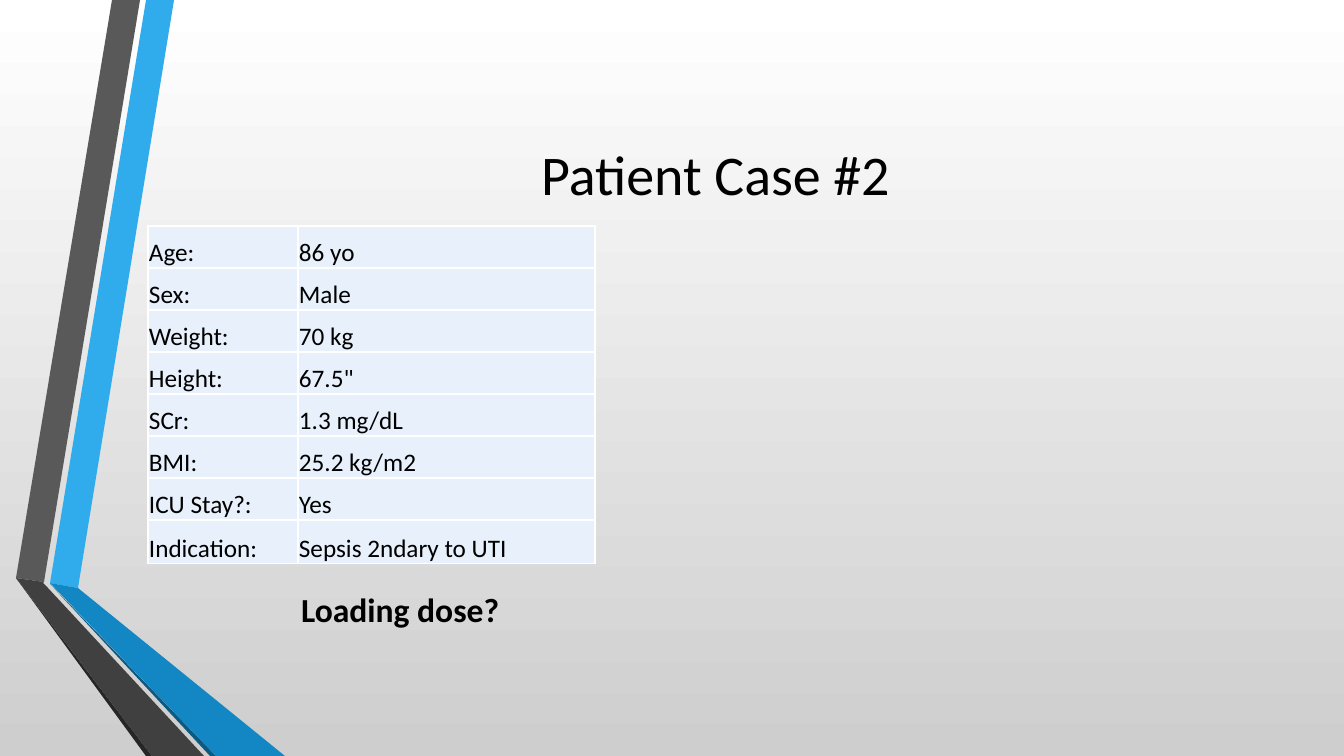
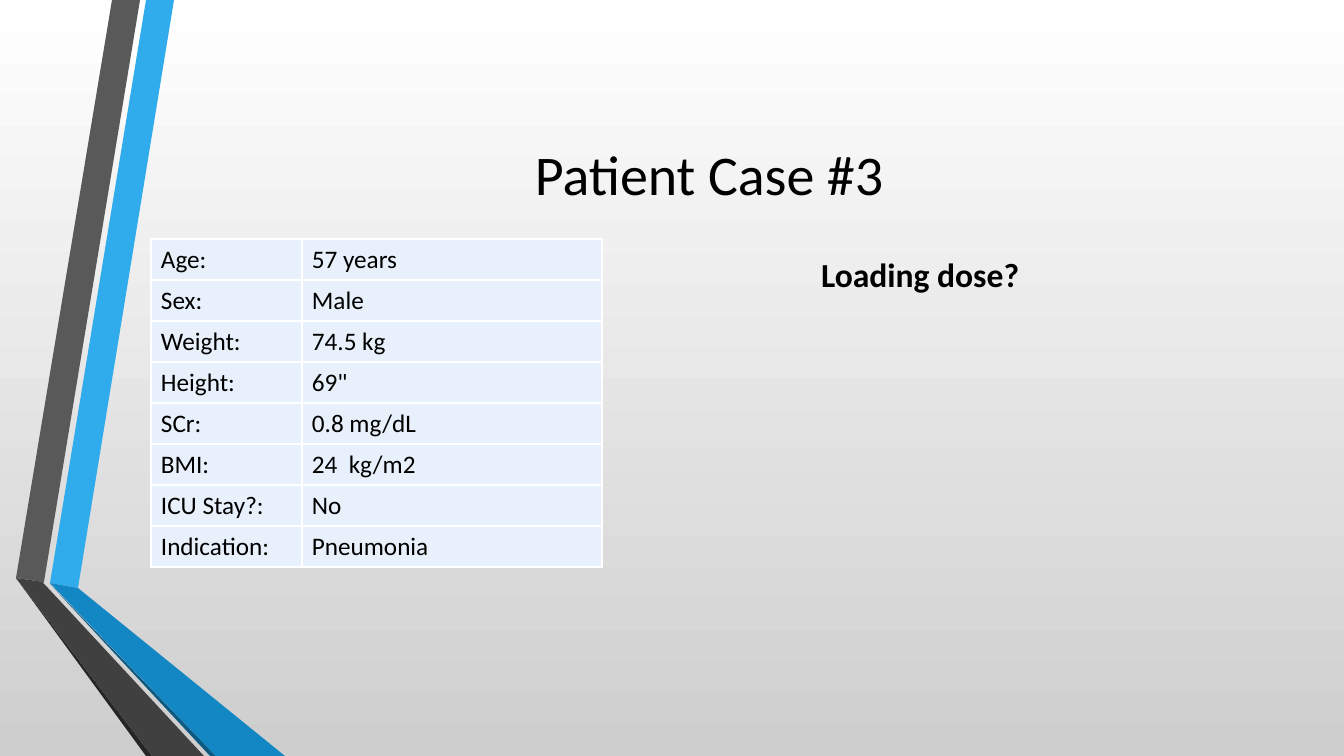
from lxml import etree
from pptx import Presentation, util as u
from pptx.dml import color
from pptx.enum import text
from pptx.oxml import ns

EMU_PER_PX = 12192000 / 1344
WIDTH, HEIGHT = 1344, 756
BANDS = [
    ("30ACEC", [(50, 583), (78, 588), (174, 0), (146, 0)]),
    ("595959", [(140, 0), (112, 0), (16, 578), (44, 582)]),
    ("262626", [(16, 578), (146, 756), (152, 756)]),
    ("0C5A82", [(50, 584), (210, 756), (216, 756)]),
    ("1287C3", [(50, 583), (216, 756), (285, 756), (78, 588)]),
    ("404040", [(204, 756), (48, 588), (43, 583), (44, 582), (16, 578), (152, 756)]),
]
LABELS = ["Age:", "Sex:", "Weight:", "Height:", "SCr:", "BMI:", "ICU Stay?:", "Indication:"]


def px(length):
    """Turn pixels into EMU."""
    return u.Emu(round(length * EMU_PER_PX))


def rgb(value):
    """Turn a hex string into a colour."""
    return color.RGBColor.from_string(value)


class Deck:
    """Hold the shared style and the current slide."""

    FONT = "Calibri"
    INK = "000000"
    CELL_FILL = "E8F1FB"
    BORDER = "FFFFFF"
    BACKGROUND = ("FFFFFF", "CECECE")

    def __init__(self):
        """Start an empty presentation."""
        self.presentation = Presentation()
        self.presentation.slide_width = px(WIDTH)
        self.presentation.slide_height = px(HEIGHT)
        self.slide = None

    def add_slide(self, title):
        """Add a slide with its background, bands and title."""
        self.slide = self.presentation.slides.add_slide(self.presentation.slide_layouts[6])
        fill = self.slide.background.fill
        fill.gradient()
        fill.gradient_angle = 270
        for position, (stop, value) in enumerate(zip(fill.gradient_stops, self.BACKGROUND)):
            stop.color.rgb = rgb(value)
            stop.position = position
        self.add_bands()
        self.add_text(title, (163, 76, 1105, 194), 40, anchor=text.MSO_ANCHOR.MIDDLE)

    def add_bands(self):
        """Draw the folded bands on the left as one group."""
        group = self.slide.shapes.add_group_shape()
        for value, (start, *points) in BANDS:
            builder = group.shapes.build_freeform(*start, scale=EMU_PER_PX)
            builder.add_line_segments(points, close=True)
            shape = builder.convert_to_shape()
            shape.shadow.inherit = False
            shape.fill.solid()
            shape.fill.fore_color.rgb = rgb(value)
            shape.line.fill.background()

    def add_run(self, paragraph, words, size, bold=False):
        """Add one styled run."""
        run = paragraph.add_run()
        run.text = words
        run.font.name = self.FONT
        run.font.size = u.Pt(size)
        run.font.bold = bold
        run.font.color.rgb = rgb(self.INK)

    def add_text(self, words, box, size, bold=False, anchor=text.MSO_ANCHOR.TOP):
        """Add a centred text box."""
        frame = self.slide.shapes.add_textbox(*map(px, box)).text_frame
        frame.word_wrap = True
        frame.vertical_anchor = anchor
        paragraph = frame.paragraphs[0]
        paragraph.alignment = text.PP_ALIGN.CENTER
        self.add_run(paragraph, words, size, bold)

    def add_question(self, left, top):
        """Add the bold question."""
        self.add_text("Loading dose? ", (left, top, 580, 50), 24, bold=True)

    def add_patient_table(self, values, left, top, columns, rows, margins):
        """Add the table of patient data."""
        box = (left, top, sum(columns), sum(rows))
        table = self.slide.shapes.add_table(len(rows), len(columns), *map(px, box)).table
        table.first_row = table.horz_banding = False
        for column, width in zip(table.columns, columns):
            column.width = px(width)
        for row, height, record in zip(table.rows, rows, zip(LABELS, values)):
            row.height = px(height)
            for cell, words in zip(row.cells, record):
                self.style_cell(cell, margins)
                self.add_run(cell.text_frame.paragraphs[0], words, 18)

    def style_cell(self, cell, margins):
        """Set a cell's borders, fill, margins and anchor."""
        properties = cell._tc.get_or_add_tcPr()
        for side in ("lnL", "lnR", "lnT", "lnB"):
            line = etree.SubElement(properties, ns.qn(f"a:{side}"), w=str(u.Pt(1)))
            solid = etree.SubElement(line, ns.qn("a:solidFill"))
            etree.SubElement(solid, ns.qn("a:srgbClr"), val=self.BORDER)
        cell.fill.solid()
        cell.fill.fore_color.rgb = rgb(self.CELL_FILL)
        cell.vertical_anchor = text.MSO_ANCHOR.BOTTOM
        cell.margin_left, cell.margin_top, cell.margin_right, cell.margin_bottom = map(px, margins)


def main():
    """Build and save both patient cases."""
    deck = Deck()

    deck.add_slide("Patient Case #2")
    deck.add_patient_table(
        ["86 yo", "Male", "70 kg", '67.5"', "1.3 mg/dL", "25.2 kg/m2", "Yes", "Sepsis 2ndary to UTI"],
        148, 226, columns=[150, 297], rows=[42] * 7 + [44], margins=(1, 1, 1, 0))
    deck.add_question(114, 584)

    deck.add_slide("Patient Case #3 ")
    deck.add_patient_table(
        ["57 years", "Male", "74.5 kg", '69"', "0.8 mg/dL", "24  kg/m2", "No", "Pneumonia"],
        151, 239, columns=[151, 300], rows=[41] * 8, margins=(10, 5, 10, 5))
    deck.add_question(634, 249)

    deck.presentation.save("out.pptx")


if __name__ == "__main__":
    main()
